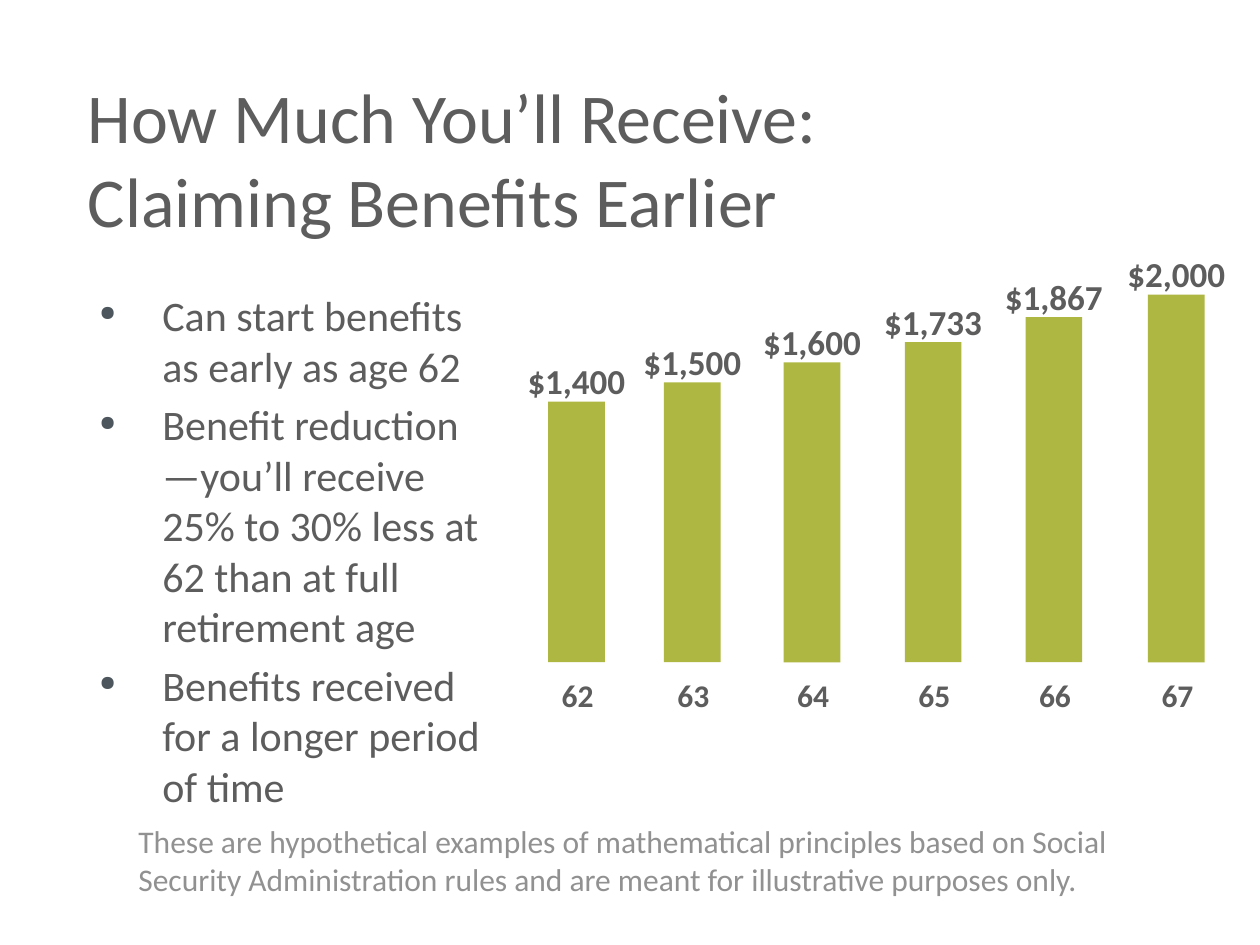
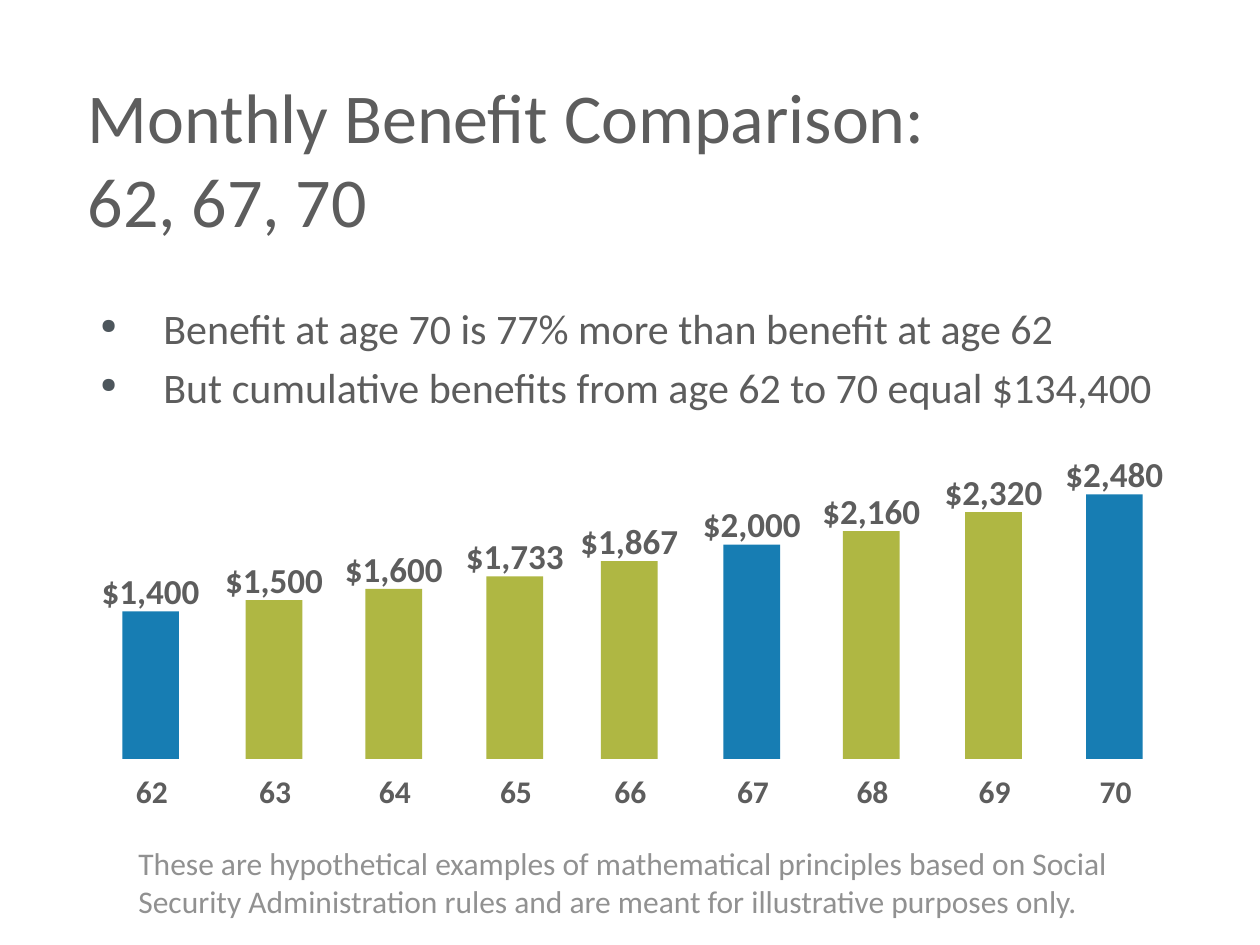
"""Build two slides on Social Security benefits by claiming age."""
from lxml import etree
from pptx import Presentation
from pptx.dml.color import RGBColor
from pptx.enum.shapes import MSO_SHAPE
from pptx.enum.text import MSO_ANCHOR, PP_ALIGN
from pptx.oxml.ns import qn
from pptx.util import Pt

RECTANGLE = MSO_SHAPE.RECTANGLE
MIDDLE = MSO_ANCHOR.MIDDLE
LEFT, CENTER = PP_ALIGN.LEFT, PP_ALIGN.CENTER

FONT = "Calibri"
COLORS = {
    "text": "5D5D5D",
    "note": "919191",
    "bullet": "4D565C",
    "bar": "AFB743",
    "highlight": "177DB3",
}
FIRST_AGE = 62
BENEFITS = [1400, 1500, 1600, 1733, 1867, 2000, 2160, 2320, 2480]
BAR_WIDTH = 32.4
AMOUNT_WIDTH, AMOUNT_HEIGHT, AMOUNT_RISE = 71.3, 31.5, 27.4
AGE_WIDTH, AGE_HEIGHT, AGE_DROP = 44, 29, 4
EARLIER_BARS = [
    (313.2, 149), (379.4, 160), (447.8, 171.4), (517, 182.9), (586, 197.3), (656, 210.2),
]
COMPARISON_BARS = [
    (69.9, 84.3), (140.4, 90.7), (208.8, 97.2), (278, 104.4), (343.4, 113),
    (413.4, 122.5), (481.7, 130.1), (551.5, 141), (620.6, 151.2),
]
NOTE = (
    "These are hypothetical examples of mathematical principles based on Social "
    "Security Administration rules and are meant for illustrative purposes only."
)


def rgb(name):
    return RGBColor.from_string(COLORS[name])


def add_span(para, text, size, color="text", bold=False):
    span = para.add_run()
    span.text = text
    span.font.name = FONT
    span.font.size = Pt(size)
    span.font.bold = bold
    span.font.color.rgb = rgb(color)


def add_page(deck, title_lines):
    page = deck.slides.add_slide(deck.slide_layouts[5])
    title = page.shapes.title
    title.left, title.top, title.width, title.height = Pt(43), Pt(42), Pt(575), Pt(96)
    title.text_frame.vertical_anchor = MIDDLE
    para = title.text_frame.paragraphs[0]
    para.alignment = LEFT
    for index, line in enumerate(title_lines):
        if index:
            para.add_line_break()
        add_span(para, line, 40)
    return page


def add_text_box(page, left, top, width, height, wrap=True):
    box = page.shapes.add_textbox(Pt(left), Pt(top), Pt(width), Pt(height))
    box.text_frame.word_wrap = wrap
    return box.text_frame


def set_bullet(para):
    props = para._p.get_or_add_pPr()
    props.set("marL", str(Pt(36)))
    props.set("indent", str(Pt(-36)))
    color = etree.SubElement(props, qn("a:buClr"))
    etree.SubElement(color, qn("a:srgbClr"), val=COLORS["bullet"])
    etree.SubElement(props, qn("a:buSzPct"), val="50000")
    etree.SubElement(props, qn("a:buChar"), char="●")


def add_bullets(page, items, left, top, width, height):
    frame = add_text_box(page, left, top, width, height)
    for index, item in enumerate(items):
        para = frame.add_paragraph() if index else frame.paragraphs[0]
        set_bullet(para)
        if index:
            para.space_before = Pt(4.8)
        add_span(para, item, 24)


def add_note(page, top):
    frame = add_text_box(page, 72, top, 578, 51)
    add_span(frame.paragraphs[0], NOTE, 18, "note")


def add_bar(page, left, top, height, color):
    bar = page.shapes.add_shape(RECTANGLE, Pt(left), Pt(top), Pt(BAR_WIDTH), Pt(height))
    bar.shadow.inherit = False
    bar.fill.solid()
    bar.fill.fore_color.rgb = rgb(color)
    bar.line.fill.background()


def add_label(page, text, size, middle, top, width, height, wrap):
    frame = add_text_box(page, middle - width / 2, top, width, height, wrap)
    para = frame.paragraphs[0]
    para.alignment = CENTER
    add_span(para, text, size, bold=True)


def add_benefit_bars(page, bars, baseline, highlights=()):
    """Stand one bar per age on the baseline, amount above and age below."""
    for index, ((left, height), benefit) in enumerate(zip(bars, BENEFITS)):
        age = FIRST_AGE + index
        top = baseline - height
        middle = left + BAR_WIDTH / 2
        add_bar(page, left, top, height, "highlight" if age in highlights else "bar")
        add_label(page, f"${benefit:,}", 20, middle, top - AMOUNT_RISE,
                  AMOUNT_WIDTH, AMOUNT_HEIGHT, wrap=False)
        add_label(page, str(age), 18, middle + 0.7, baseline + AGE_DROP,
                  AGE_WIDTH, AGE_HEIGHT, wrap=True)


def add_earlier_page(deck):
    page = add_page(deck, ["How Much You’ll Receive:", "Claiming Benefits Earlier"])
    add_bullets(page, [
        "Can start benefits as early as age 62",
        "Benefit reduction —you’ll receive 25% to 30% less at 62 than at full retirement age",
        "Benefits received for a longer period of time",
    ], 49.7, 162, 244, 264)
    add_benefit_bars(page, EARLIER_BARS, baseline=378.5)
    add_note(page, 466.2)


def add_comparison_page(deck):
    page = add_page(deck, ["Monthly Benefit Comparison:", "62, 67, 70"])
    add_bullets(page, [
        "Benefit at age 70 is 77% more than benefit at age 62",
        "But cumulative benefits from age 62 to 70 equal $134,400",
    ], 50.3, 169.3, 621, 89)
    add_benefit_bars(page, COMPARISON_BARS, baseline=433.7, highlights=(62, 67, 70))
    add_note(page, 479)


def main():
    deck = Presentation()
    deck.slide_width, deck.slide_height = Pt(720), Pt(540)
    add_earlier_page(deck)
    add_comparison_page(deck)
    deck.save("out.pptx")


if __name__ == "__main__":
    main()
